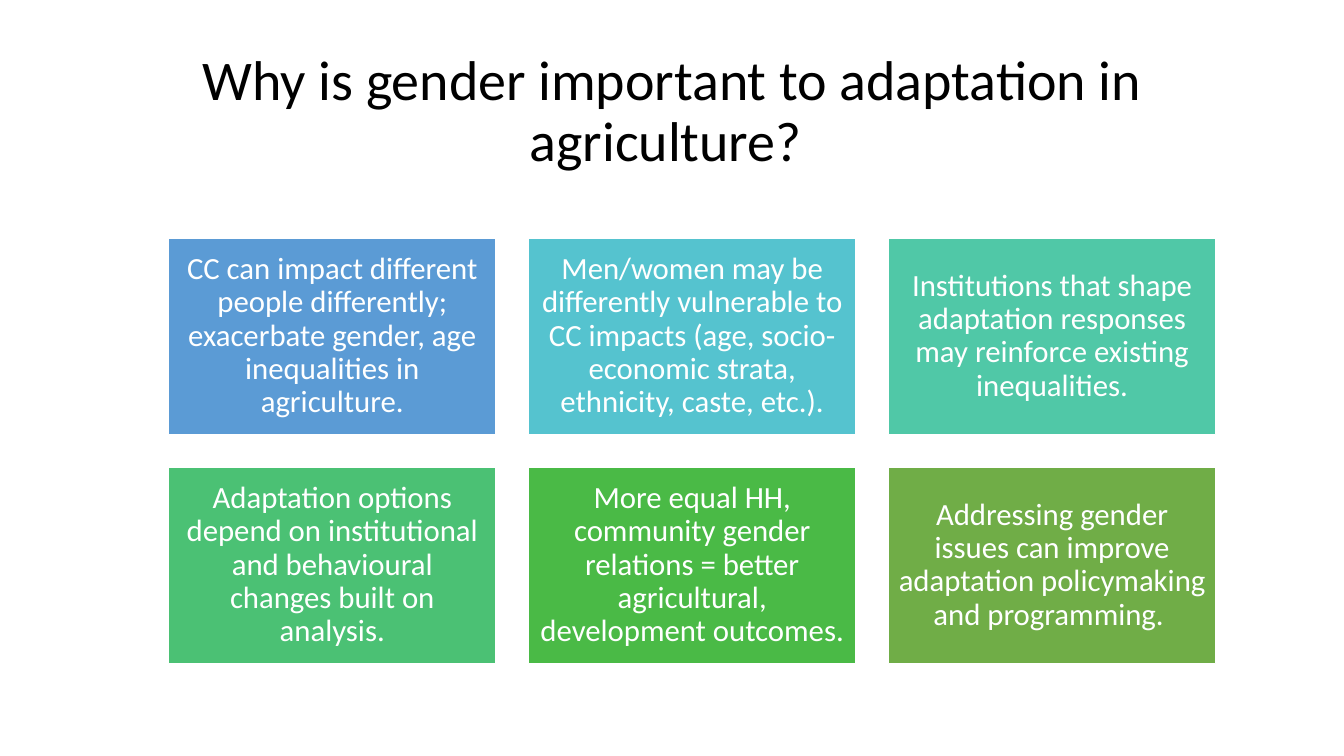
from dataclasses import dataclass

from pptx import Presentation
from pptx import util as u
from pptx.dml import color
from pptx.enum import shapes, text


@dataclass(frozen=True)
class Theme:
    font: str = "Calibri"
    title_size: int = 40
    card_size: int = 22
    title_color: str = "000000"
    card_color: str = "FFFFFF"
    border: str = "FFFFFF"


theme = Theme()


def rgb(value):
    return color.RGBColor.from_string(value)


def write(sp, words, size, ink, inset_x, inset_y):
    """Fill a shape with one centred paragraph."""
    tf = sp.text_frame
    frame_format = {
        "word_wrap": True,
        "vertical_anchor": text.MSO_ANCHOR.MIDDLE,
        "margin_left": inset_x,
        "margin_right": inset_x,
        "margin_top": inset_y,
        "margin_bottom": inset_y,
    }
    for name, value in frame_format.items():
        setattr(tf, name, value)
    p = tf.paragraphs[0]
    for name, value in {"alignment": text.PP_ALIGN.CENTER, "line_spacing": 0.9}.items():
        setattr(p, name, value)
    r = p.add_run()
    r.text = words
    for name, value in {"name": theme.font, "size": u.Pt(size)}.items():
        setattr(r.font, name, value)
    r.font.color.rgb = rgb(ink)


prs = Presentation()
prs.slide_width, prs.slide_height = u.Cm(33.87), u.Cm(19.05)
s = prs.slides.add_slide(prs.slide_layouts[6])

# Title
title = s.shapes.add_textbox(u.Cm(2.33), u.Cm(1.01), u.Cm(29.21), u.Cm(3.68))
write(title, "Why is gender important to adaptation in agriculture? ",
      theme.title_size, theme.title_color, u.Cm(0.25), u.Cm(0.13))

# Cards: three columns, two rows
cards = [
    ("5B9BD5", "CC can impact different people differently; exacerbate gender, "
               "age inequalities in agriculture."),
    ("55C3CF", "Men/women may be differently vulnerable to CC impacts "
               "(age, socio-economic strata, ethnicity, caste, etc.)."),
    ("50C8A7", "Institutions that shape adaptation responses may reinforce "
               "existing inequalities."),
    ("4BC174", "Adaptation options depend on institutional and behavioural "
               "changes built on analysis."),
    ("4ABA46", "More equal HH, community gender relations = better "
               "agricultural, development outcomes."),
    ("70AD47", "Addressing gender issues can improve adaptation policymaking "
               "and programming. "),
]
columns = 3
left, top = 4.25, 6.0
width, height, gap = 8.25, 4.95, 0.82

for i, (fill, words) in enumerate(cards):
    row, col = divmod(i, columns)
    sp = s.shapes.add_shape(
        shapes.MSO_SHAPE.RECTANGLE,
        u.Cm(left + col * (width + gap)), u.Cm(top + row * (height + gap)),
        u.Cm(width), u.Cm(height))
    sp.shadow.inherit = False
    sp.fill.solid()
    sp.fill.fore_color.rgb = rgb(fill)
    sp.line.color.rgb = rgb(theme.border)
    sp.line.width = u.Pt(1)
    write(sp, words, theme.card_size, theme.card_color, u.Cm(0.23), u.Cm(0.23))

prs.save("out.pptx")
